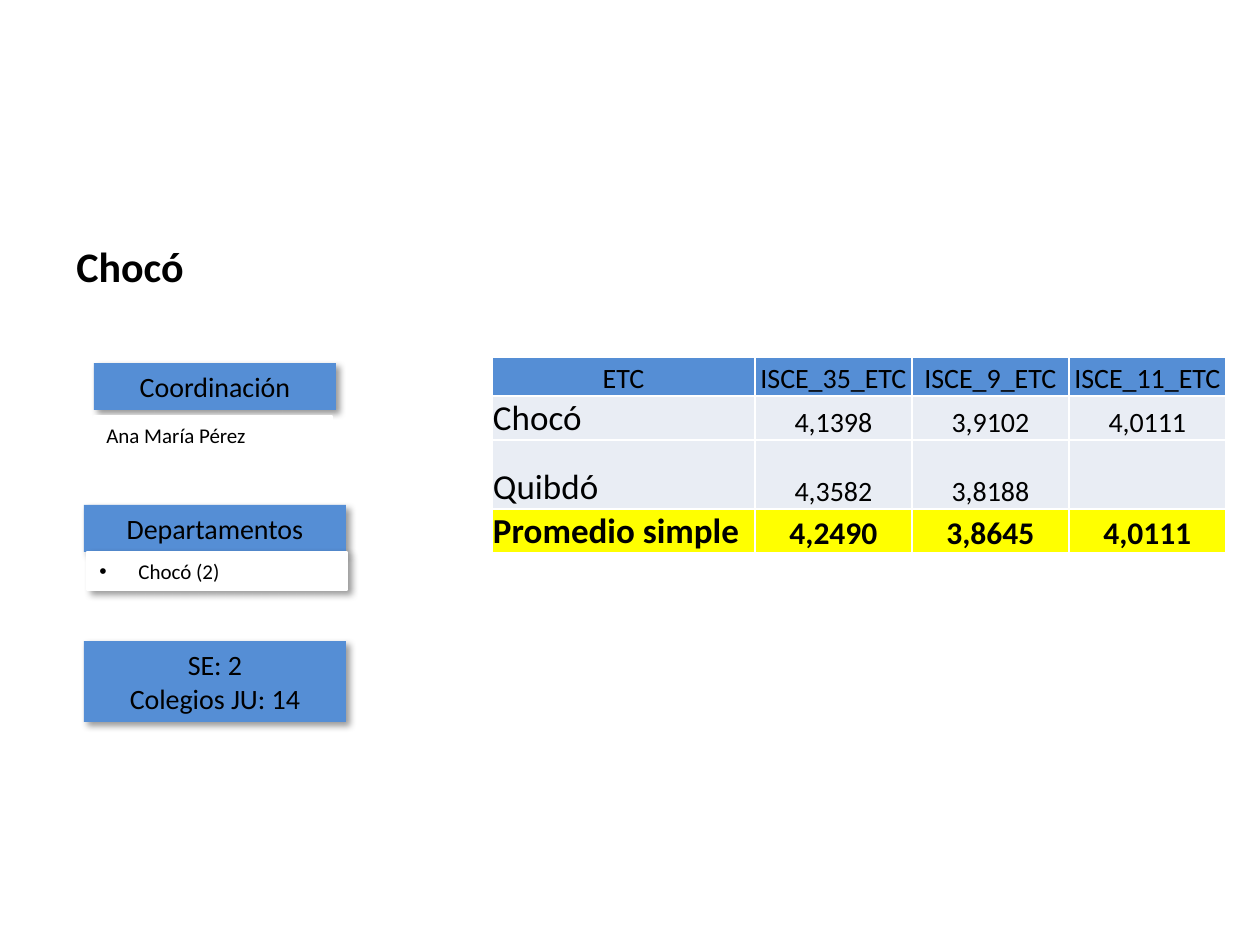
from dataclasses import dataclass

import pptx
import pptx.dml.color
import pptx.enum.shapes
import pptx.enum.text
import pptx.oxml
import pptx.oxml.ns
import pptx.util
from lxml import etree

PX_PER_INCH = 126
FONT = "Calibri"
COLORS = {
    "blue": "558ED5",
    "pale": "E9EDF4",
    "yellow": "FFFF00",
    "white": "FFFFFF",
    "black": "000000",
}
ALIGN = pptx.enum.text.PP_ALIGN
ANCHOR = pptx.enum.text.MSO_ANCHOR


@dataclass
class Panel:
    left: int
    top: int
    width: int
    height: int
    lines: list[str]
    heading: bool = True
    shadow: bool = True
    bullet: str = ""


@dataclass
class Row:
    height: int
    fill: str
    texts: list[str]
    label_size: int = 20
    value_size: int = 16
    label_align: ALIGN = ALIGN.LEFT
    bold: bool = False


PANELS = [
    Panel(84, 505, 262, 47, ["Departamentos"]),
    Panel(87, 552, 260, 38, ["Chocó (2)"], heading=False, bullet="•"),
    Panel(84, 641, 262, 81, ["SE: 2", "Colegios JU: 14"]),
    Panel(94, 363, 242, 47, ["Coordinación"]),
    Panel(94, 416, 238, 38, ["Ana María Pérez"], heading=False, shadow=False),
]
COLUMN_WIDTHS = [263, 157, 157, 157]
ROWS = [
    Row(39, "blue", ["ETC", "ISCE_35_ETC", "ISCE_9_ETC", "ISCE_11_ETC"],
        label_size=16, label_align=ALIGN.CENTER),
    Row(44, "pale", ["Chocó", "4,1398", "3,9102", "4,0111"]),
    Row(69, "pale", ["Quibdó", "4,3582", "3,8188", ""]),
    Row(44, "yellow", ["Promedio simple", "4,2490", "3,8645", "4,0111"],
        value_size=18, bold=True),
]


def px(length: int) -> pptx.util.Emu:
    return pptx.util.Emu(round(length * 914400 / PX_PER_INCH))


def color(name: str) -> pptx.dml.color.RGBColor:
    return pptx.dml.color.RGBColor.from_string(COLORS[name])


def write(para, text: str, *, size: int, bold: bool = False, align=ALIGN.LEFT) -> None:
    para.alignment = align
    span = para.add_run()
    span.text = text
    span.font.name = FONT
    span.font.size = pptx.util.Pt(size)
    span.font.bold = bold
    span.font.color.rgb = color("black")


def add_shadow(shape) -> None:
    shape._element.spPr.append(pptx.oxml.parse_xml(
        f'<a:effectLst {pptx.oxml.ns.nsdecls("a")}>'
        f'<a:outerShdw blurRad="{pptx.util.Pt(4)}" dist="{pptx.util.Pt(3)}" '
        'dir="2700000" algn="tl" rotWithShape="0">'
        f'<a:srgbClr val="{COLORS["black"]}"><a:alpha val="40000"/></a:srgbClr>'
        "</a:outerShdw></a:effectLst>"))


def hang(para, bullet: str) -> None:
    """Give the paragraph a hanging indent, with a bullet if one is named."""
    properties = para._p.get_or_add_pPr()
    properties.set("marL", str(px(39)))
    properties.set("indent", str(-px(39)))
    if bullet:
        etree.SubElement(properties, pptx.oxml.ns.qn("a:buFont"), typeface="Arial")
        etree.SubElement(properties, pptx.oxml.ns.qn("a:buChar"), char=bullet)


def add_panel(slide, panel: Panel) -> None:
    box = slide.shapes.add_shape(
        pptx.enum.shapes.MSO_SHAPE.RECTANGLE,
        px(panel.left), px(panel.top), px(panel.width), px(panel.height))
    box.fill.solid()
    box.fill.fore_color.rgb = color("blue" if panel.heading else "white")
    if panel.heading:
        box.line.fill.background()
    else:
        box.line.color.rgb = color("white")
        box.line.width = pptx.util.Pt(0.75)
    if panel.shadow:
        add_shadow(box)
    else:
        box.shadow.inherit = False
    frame = box.text_frame
    frame.word_wrap = True
    frame.auto_size = pptx.enum.text.MSO_AUTO_SIZE.SHAPE_TO_FIT_TEXT
    frame.vertical_anchor = ANCHOR.MIDDLE
    for index, line in enumerate(panel.lines):
        para = frame.add_paragraph() if index else frame.paragraphs[0]
        if panel.heading:
            write(para, line, size=16, align=ALIGN.CENTER)
        else:
            hang(para, panel.bullet)
            write(para, line, size=12)


def add_title(slide, text: str) -> None:
    box = slide.shapes.add_textbox(px(64), px(234), px(486), px(64))
    box.text_frame.word_wrap = True
    box.text_frame.auto_size = pptx.enum.text.MSO_AUTO_SIZE.SHAPE_TO_FIT_TEXT
    write(box.text_frame.paragraphs[0], text, size=24, bold=True)


def format_cell(cell, fill: str) -> None:
    cell.margin_left = cell.margin_right = cell.margin_top = px(1)
    cell.margin_bottom = 0
    cell.vertical_anchor = ANCHOR.BOTTOM
    for side in ("lnL", "lnR", "lnT", "lnB"):
        cell._tc.get_or_add_tcPr().append(pptx.oxml.parse_xml(
            f'<a:{side} {pptx.oxml.ns.nsdecls("a")} w="{pptx.util.Pt(1)}"><a:solidFill>'
            f'<a:srgbClr val="{COLORS["white"]}"/></a:solidFill></a:{side}>'))
    cell.fill.solid()
    cell.fill.fore_color.rgb = color(fill)


def add_scores(slide) -> None:
    table = slide.shapes.add_table(
        len(ROWS), len(COLUMN_WIDTHS), px(492), px(357),
        px(sum(COLUMN_WIDTHS)), px(sum(row.height for row in ROWS))).table
    for column, width in zip(table.columns, COLUMN_WIDTHS):
        column.width = px(width)
    for row_index, row in enumerate(ROWS):
        table.rows[row_index].height = px(row.height)
        for column_index, text in enumerate(row.texts):
            cell = table.cell(row_index, column_index)
            format_cell(cell, row.fill)
            if text:
                is_value = column_index > 0
                write(cell.text_frame.paragraphs[0], text, bold=row.bold,
                      size=row.value_size if is_value else row.label_size,
                      align=ALIGN.CENTER if is_value else row.label_align)


def main() -> None:
    deck = pptx.Presentation()
    deck.slide_width, deck.slide_height = px(1260), px(945)
    slide = deck.slides.add_slide(deck.slide_layouts[6])
    for panel in PANELS:
        add_panel(slide, panel)
    add_title(slide, "Chocó")
    add_scores(slide)
    deck.save("out.pptx")


if __name__ == "__main__":
    main()
